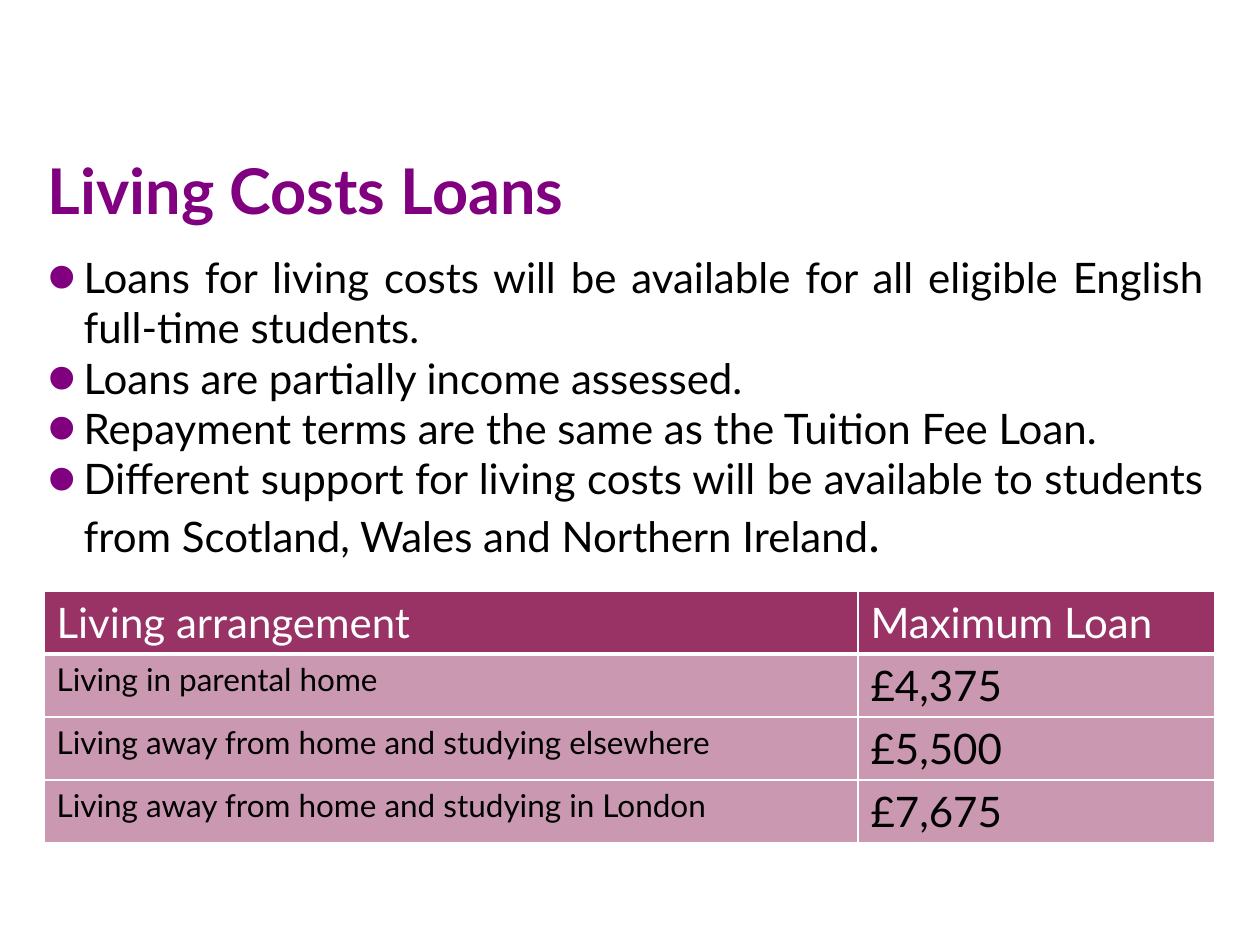
from typing import NamedTuple

from lxml.etree import SubElement
from pptx import Presentation
from pptx.dml.color import RGBColor
from pptx.enum.text import MSO_ANCHOR, MSO_AUTO_SIZE, PP_ALIGN
from pptx.oxml import parse_xml
from pptx.oxml.ns import nsdecls, qn
from pptx.util import Emu, Pt

PX_PER_INCH = 126
FONT = "Lato"
PURPLE, PLUM, BLACK, WHITE = "800080", "993366", "000000", "FFFFFF"
TABLE_LEFT, TABLE_TOP, ROW_HEIGHT = 44, 591, 63
COLUMN_WIDTHS = (814, 357)
BULLET_INDENT = 36


class Frame(NamedTuple):
    left: int
    top: int
    width: int
    height: int


class Loan(NamedTuple):
    arrangement: str
    maximum: str


TITLE_FRAME = Frame(35, 145, 1062, 89)
BODY_FRAME = Frame(35, 245, 1181, 326)
POINTS = (
    ("Loans for living costs will be available for all eligible English full-time students.",),
    ("Loans are partially income assessed.",),
    ("Repayment terms are the same as the Tuition Fee Loan.",),
    ("Different support for living costs will be available to students from Scotland, "
     "Wales and Northern Ireland", "."),
)
HEADER = Loan("Living arrangement", "Maximum Loan")
LOANS = (
    Loan("Living in parental home", "£4,375"),
    Loan("Living away from home and studying elsewhere", "£5,500"),
    Loan("Living away from home and studying in London", "£7,675"),
)


def px(length: int) -> Emu:
    """Turn pixels into EMU."""
    return Emu(round(length * 914400 / PX_PER_INCH))


def color(value: str) -> RGBColor:
    """Turn a hex string into a colour."""
    return RGBColor.from_string(value)


def style(paragraph, size: int, value: str, bold: bool = False) -> None:
    """Set the font of a whole paragraph."""
    font = paragraph.font
    font.name, font.size, font.bold = FONT, Pt(size), bold
    font.color.rgb = color(value)


def place(box, frame: Frame) -> None:
    """Move a placeholder and anchor its text at the top."""
    box.left, box.top, box.width, box.height = map(px, frame)
    box.text_frame.word_wrap = True
    box.text_frame.auto_size = MSO_AUTO_SIZE.NONE
    box.text_frame.vertical_anchor = MSO_ANCHOR.TOP


def add_bullet(paragraph) -> None:
    """Give a paragraph a large purple bullet and a hanging indent."""
    properties = paragraph._p.get_or_add_pPr()
    properties.set("marL", str(px(BULLET_INDENT)))
    properties.set("indent", str(-px(BULLET_INDENT)))
    bullet_color = SubElement(properties, qn("a:buClr"))
    SubElement(bullet_color, qn("a:srgbClr"), val=PURPLE)
    SubElement(properties, qn("a:buSzPct"), val="200000")
    SubElement(properties, qn("a:buChar"), char="•")


def add_title(slide) -> None:
    """Write the slide title."""
    box = slide.shapes.title
    place(box, TITLE_FRAME)
    box.text_frame.text = "Living Costs Loans"
    para = box.text_frame.paragraphs[0]
    para.alignment = PP_ALIGN.LEFT
    style(para, 36, PURPLE, bold=True)


def add_points(slide) -> None:
    """Write the justified bullet list, with a larger closing full stop."""
    box = slide.placeholders[1]
    place(box, BODY_FRAME)
    for index, parts in enumerate(POINTS):
        frame = box.text_frame
        para = frame.add_paragraph() if index else frame.paragraphs[0]
        para.alignment = PP_ALIGN.JUSTIFY
        para.space_before = Pt(0)
        add_bullet(para)
        style(para, 24, BLACK)
        for part in parts:
            span = para.add_run()
            span.text = part
            if part == ".":
                span.font.size = Pt(28)


def fill_cell(cell, text: str, size: int, is_header: bool) -> None:
    """Write one cell with its fill and white borders."""
    cell.text = text
    style(cell.text_frame.paragraphs[0], size, WHITE if is_header else BLACK)
    cell.fill.solid()
    cell.fill.fore_color.rgb = color(PLUM)
    properties = cell._tc.get_or_add_tcPr()
    if not is_header:
        SubElement(properties.find(".//" + qn("a:srgbClr")), qn("a:alpha"), val="50000")
    for position, side in enumerate("LRTB"):
        width = Pt(3 if is_header and side == "B" else 1)
        properties.insert(position, parse_xml(
            f'<a:ln{side} {nsdecls("a")} w="{width}"><a:solidFill>'
            f'<a:srgbClr val="{WHITE}"/></a:solidFill></a:ln{side}>'))


def add_loan_table(slide) -> None:
    """Draw the table of maximum loans."""
    rows = (HEADER, *LOANS)
    frame = Frame(TABLE_LEFT, TABLE_TOP, sum(COLUMN_WIDTHS), ROW_HEIGHT * len(rows))
    table = slide.shapes.add_table(len(rows), len(COLUMN_WIDTHS), *map(px, frame)).table
    table.horz_banding = False
    for column, width in zip(table.columns, COLUMN_WIDTHS):
        column.width = px(width)
    for row_index, loan in enumerate(rows):
        table.rows[row_index].height = px(ROW_HEIGHT)
        is_header = loan is HEADER
        sizes = (24 if is_header else 18, 24)
        for column_index, (text, size) in enumerate(zip(loan, sizes)):
            fill_cell(table.cell(row_index, column_index), text, size, is_header)


def main() -> None:
    """Build and save the slide."""
    deck = Presentation()
    deck.slide_width, deck.slide_height = px(1260), px(945)
    slide = deck.slides.add_slide(deck.slide_layouts[1])
    add_title(slide)
    add_points(slide)
    add_loan_table(slide)
    deck.save("out.pptx")


if __name__ == "__main__":
    main()
